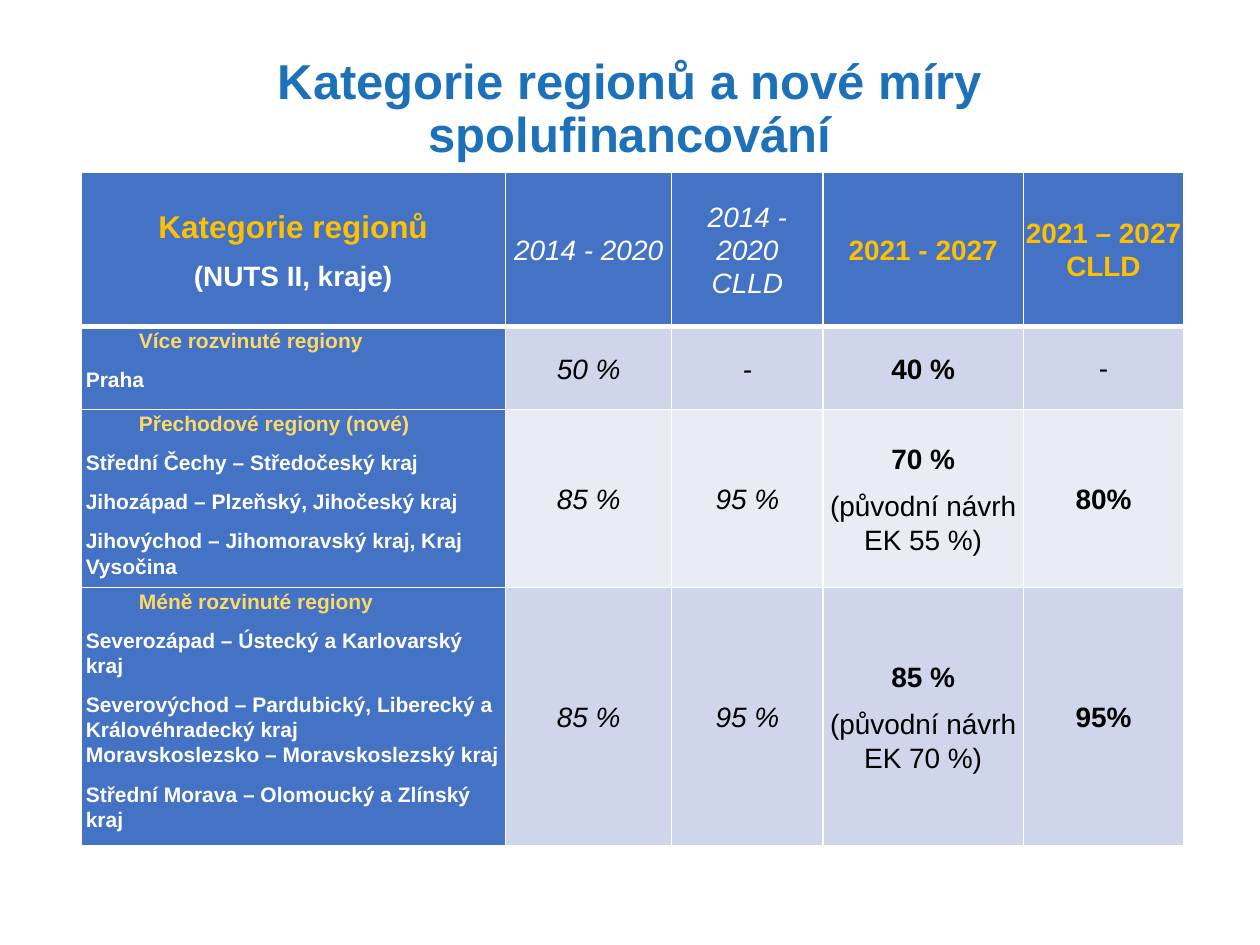
from copy import deepcopy

from lxml import etree
from pptx import Presentation
from pptx.dml.color import RGBColor
from pptx.enum.text import MSO_ANCHOR, PP_ALIGN
from pptx.oxml.ns import qn
from pptx.util import Cm, Pt

LEFT, CENTER = PP_ALIGN.LEFT, PP_ALIGN.CENTER
TOP, MIDDLE = MSO_ANCHOR.TOP, MSO_ANCHOR.MIDDLE

COLORS = {
    "title": "1D71B8",
    "header": "4472C4",
    "gold": "FFC000",
    "light gold": "FFD966",
    "white": "FFFFFF",
    "black": "000000",
    "band dark": "CFD5EA",
    "band light": "E9EBF5",
}

# style: (size, colour, bold, italic)
STYLES = {
    "title": (28, "title", True, False),
    "heading": (18, "gold", True, False),
    "subheading": (16, "white", True, False),
    "old period": (16, "white", False, True),
    "new period": (16, "gold", True, False),
    "category": (12, "light gold", True, False),
    "region": (12, "white", True, False),
    "old rate": (16, "black", False, True),
    "new rate": (16, "black", True, False),
    "note": (16, "black", False, False),
}

# Each cell is a list of (text, style) paragraphs
ROWS = [
    [
        [("Kategorie regionů", "heading"), ("(NUTS II, kraje)", "subheading")],
        [("2014 - 2020", "old period")],
        [("2014 - 2020\vCLLD", "old period")],
        [("2021 - 2027", "new period")],
        [("2021 – 2027 CLLD", "new period")],
    ],
    [
        [("Více rozvinuté regiony", "category"), ("Praha", "region")],
        [("50 %", "old rate")],
        [("-", "old rate")],
        [("40 %", "new rate")],
        [("-", "note")],
    ],
    [
        [
            ("Přechodové regiony (nové)", "category"),
            ("Střední Čechy – Středočeský kraj", "region"),
            ("Jihozápad – Plzeňský, Jihočeský kraj", "region"),
            ("Jihovýchod – Jihomoravský kraj, Kraj Vysočina", "region"),
        ],
        [("85 %", "old rate")],
        [("95 %", "old rate")],
        [("70 %", "new rate"), ("(původní návrh EK 55 %)", "note")],
        [("80%", "new rate")],
    ],
    [
        [
            ("Méně rozvinuté regiony", "category"),
            ("Severozápad – Ústecký a Karlovarský kraj", "region"),
            ("Severovýchod – Pardubický, Liberecký a Královéhradecký kraj\v"
             "Moravskoslezsko – Moravskoslezský kraj", "region"),
            ("Střední Morava – Olomoucký a Zlínský kraj", "region"),
        ],
        [("85 %", "old rate")],
        [("95 %", "old rate")],
        [("85 %", "new rate"), ("(původní návrh EK 70 %)", "note")],
        [("95%", "new rate")],
    ],
]
COLUMN_WIDTHS = [8.56, 3.35, 3.05, 4.04, 3.23]
ROW_HEIGHTS = [3.1, 1.68, 3.1, 4.27]


def write_paragraphs(text_frame, lines, line_spacing, space_after, alignment):
    for index, (text, style) in enumerate(lines):
        paragraph = text_frame.paragraphs[0] if index == 0 else text_frame.add_paragraph()
        if style == "category":
            paragraph._p.get_or_add_pPr().set("marL", str(Cm(1.07)))
        paragraph.text = text
        paragraph.alignment = alignment
        paragraph.line_spacing = line_spacing
        paragraph.space_after = Pt(space_after)
        size, color, bold, italic = STYLES[style]
        font_values = {"name": "Arial", "size": Pt(size), "bold": bold, "italic": italic}
        for run in paragraph.runs:
            for name, value in font_values.items():
                setattr(run.font, name, value)
            run.font.color.rgb = RGBColor.from_string(COLORS[color])
        # A line break takes the size of the text around it
        for line_break in paragraph._p.findall(qn("a:br")):
            line_break.append(deepcopy(paragraph.runs[0]._r.rPr))


def add_borders(cell, widths):
    properties = cell._tc.get_or_add_tcPr()
    for side, width in widths.items():
        line = etree.SubElement(properties, qn(f"a:ln{side}"), w=str(Pt(width)))
        fill = etree.SubElement(line, qn("a:solidFill"))
        etree.SubElement(fill, qn("a:srgbClr"), val=COLORS["white"])


presentation = Presentation()
presentation.slide_width = Cm(25.4)
presentation.slide_height = Cm(19.05)
slide = presentation.slides.add_slide(presentation.slide_layouts[6])

title = slide.shapes.add_textbox(Cm(1.75), Cm(1.02), Cm(21.9), Cm(3.68))
title.text_frame.word_wrap = True
title.text_frame.vertical_anchor = TOP
write_paragraphs(title.text_frame,
                 [("Kategorie regionů a nové míry spolufinancování", "title")],
                 0.9, 0, CENTER)

table = slide.shapes.add_table(
    len(ROWS), len(COLUMN_WIDTHS), Cm(1.63), Cm(3.48),
    Cm(sum(COLUMN_WIDTHS)), Cm(sum(ROW_HEIGHTS))).table
for column, width in zip(table.columns, COLUMN_WIDTHS):
    column.width = Cm(width)
for row, height in zip(table.rows, ROW_HEIGHTS):
    row.height = Cm(height)

last_column = len(COLUMN_WIDTHS) - 1
for row_index, row in enumerate(ROWS):
    for column_index, lines in enumerate(row):
        cell = table.cell(row_index, column_index)
        is_region_list = row_index > 0 and column_index == 0
        is_last = column_index == last_column
        side_margin = Cm(0 if is_last else 0.1)
        cell_values = {
            "margin_left": side_margin,
            "margin_right": side_margin,
            "margin_top": Cm(0 if is_last else 0.02),
            "margin_bottom": Cm(0),
            "vertical_anchor": TOP if is_region_list else MIDDLE,
        }
        for name, value in cell_values.items():
            setattr(cell, name, value)

        add_borders(cell, {"L": 1, "R": 1,
                           "T": 3 if row_index == 1 else 1,
                           "B": 3 if row_index == 0 else 1})
        if row_index == 0 or column_index == 0:
            fill_color = "header"
        else:
            fill_color = "band dark" if row_index % 2 else "band light"
        cell.fill.solid()
        cell.fill.fore_color.rgb = RGBColor.from_string(COLORS[fill_color])
        write_paragraphs(cell.text_frame, lines, 1.07, 8,
                         LEFT if is_region_list else CENTER)

presentation.save("out.pptx")
